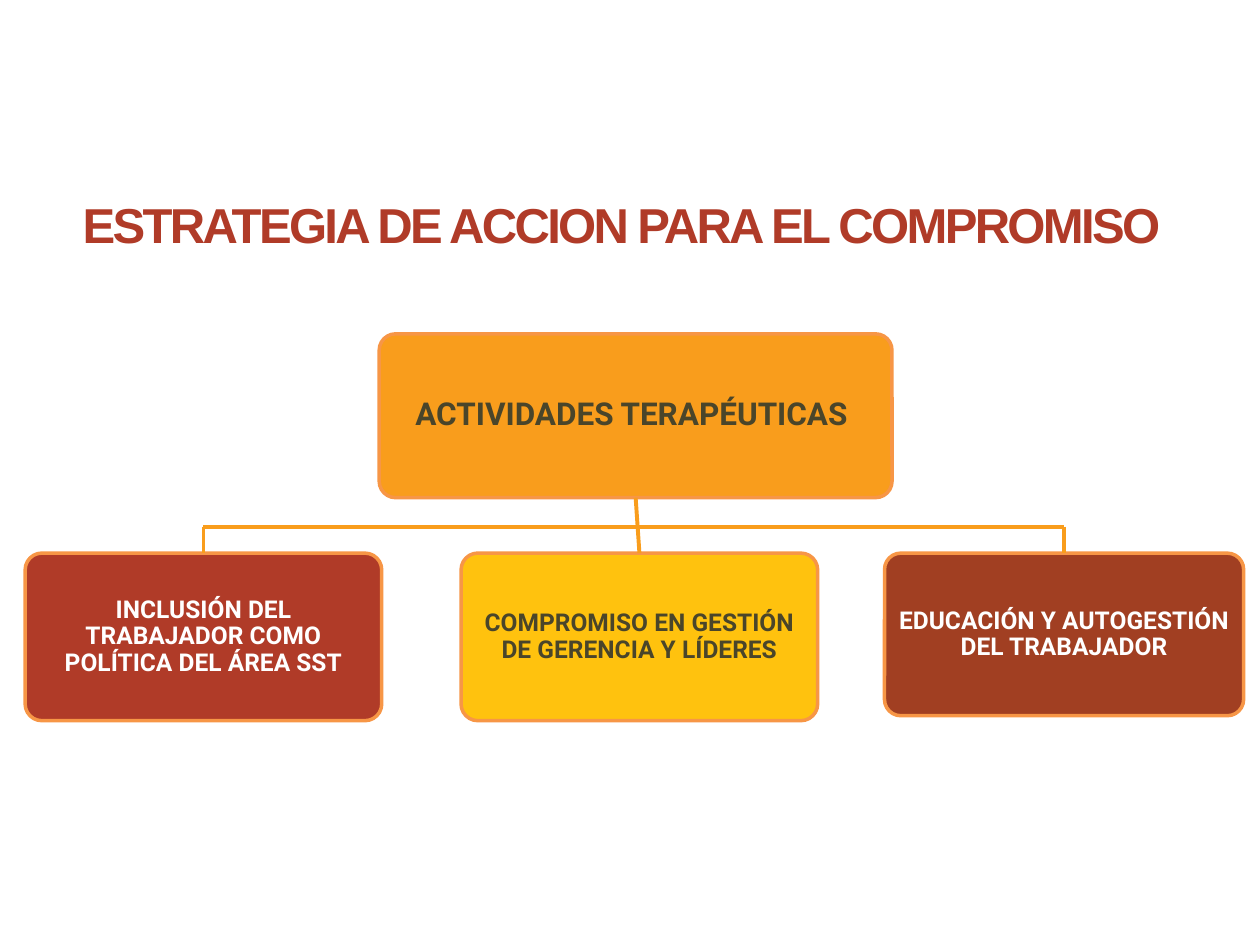
"""Builds a slide with a strategy title above a three-branch hierarchy chart."""
from lxml.etree import SubElement
from pptx import Presentation
from pptx.dml.color import RGBColor
from pptx.enum.shapes import MSO_CONNECTOR, MSO_SHAPE
from pptx.enum.text import MSO_ANCHOR, PP_ALIGN
from pptx.oxml.ns import qn
from pptx.util import Inches, Pt

RED = RGBColor(0xB0, 0x3B, 0x28)
ORANGE = RGBColor(0xF9, 0x9D, 0x1C)
YELLOW = RGBColor(0xFF, 0xC2, 0x0E)
BROWN = RGBColor(0xA1, 0x3F, 0x22)
BORDER = RGBColor(0xF7, 0x96, 0x46)
OLIVE = RGBColor(0x4A, 0x45, 0x2A)
WHITE = RGBColor(0xFF, 0xFF, 0xFF)


def write_text(shape, text, font_name, size, color):
    frame = shape.text_frame
    frame.word_wrap = True
    frame.vertical_anchor = MSO_ANCHOR.MIDDLE
    paragraph = frame.paragraphs[0]
    paragraph.alignment = PP_ALIGN.CENTER
    paragraph.line_spacing = 0.9
    run = paragraph.add_run()
    run.text = text
    run.font.name = font_name
    run.font.size = Pt(size)
    run.font.bold = True
    run.font.color.rgb = color
    return run


def add_line(shapes, start_x, start_y, end_x, end_y):
    line = shapes.add_connector(MSO_CONNECTOR.STRAIGHT, start_x, start_y, end_x, end_y)
    line.line.color.rgb = ORANGE
    line.line.width = Pt(2.25)
    SubElement(line._element.spPr, qn("a:effectLst"))
    return line


presentation = Presentation()
presentation.slide_width = Inches(10)
presentation.slide_height = Inches(7.5)
slide = presentation.slides.add_slide(presentation.slide_layouts[5])

title = slide.shapes.title
title.left, title.top = Inches(0), Inches(1.47)
title.width, title.height = Inches(9.95), Inches(0.67)
title_run = write_text(title, "ESTRATEGIA DE ACCION PARA EL COMPROMISO ", "Arial", 28, RED)
title_run.font._element.set("spc", "-150")

box_data = [
    ("ACTIVIDADES TERAPÉUTICAS ", 3.01, 2.65, 4.07, 1.3, ORANGE, OLIVE, 18),
    ("INCLUSIÓN DEL TRABAJADOR COMO POLÍTICA DEL ÁREA SST", 0.2, 4.39, 2.83, 1.33, RED, WHITE, 14),
    ("COMPROMISO EN GESTIÓN DE GERENCIA Y LÍDERES", 3.66, 4.39, 2.83, 1.33, YELLOW, OLIVE, 14),
    ("EDUCACIÓN Y AUTOGESTIÓN DEL TRABAJADOR", 7.02, 4.39, 2.85, 1.29, BROWN, WHITE, 14),
]
boxes = []
for text, left, top, width, height, fill_color, text_color, size in box_data:
    box = slide.shapes.add_shape(
        MSO_SHAPE.ROUNDED_RECTANGLE, Inches(left), Inches(top), Inches(width), Inches(height)
    )
    box.adjustments[0] = 0.1
    box.shadow.inherit = False
    box.fill.solid()
    box.fill.fore_color.rgb = fill_color
    box.line.color.rgb = BORDER
    box.line.width = Pt(2)
    frame = box.text_frame
    frame.margin_left = frame.margin_right = Inches(0.07)
    frame.margin_top = frame.margin_bottom = Inches(0.04)
    write_text(box, text, "Roboto", size, text_color)
    boxes.append(box)

root, left_box, middle_box, right_box = boxes
bus_y = Inches(4.18)
left_x, right_x = (box.left + box.width // 2 for box in (left_box, right_box))
add_line(slide.shapes, left_x, bus_y, right_x, bus_y)
for box, center_x in ((left_box, left_x), (right_box, right_x)):
    branch = add_line(slide.shapes, center_x, bus_y, center_x, box.top)
    branch.end_connect(box, 0)

trunk = add_line(slide.shapes, root.left, root.top, middle_box.left, middle_box.top)
trunk.begin_connect(root, 2)
trunk.end_connect(middle_box, 0)

presentation.save("out.pptx")
